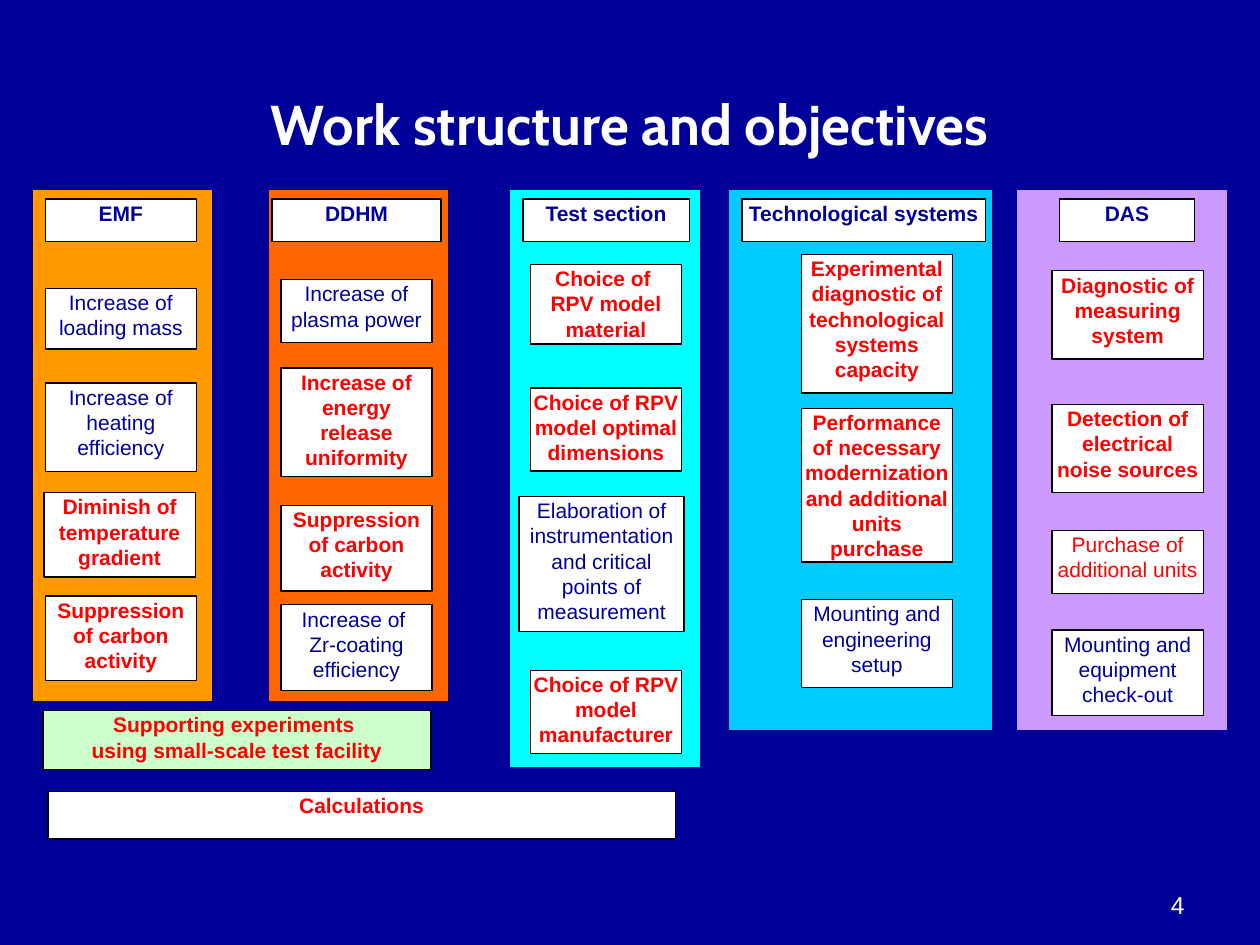
from dataclasses import dataclass

from pptx import Presentation
from pptx.dml.color import RGBColor as RGB
from pptx.enum.shapes import MSO_SHAPE as SHAPE
from pptx.enum.text import MSO_ANCHOR as ANCHOR, PP_ALIGN as ALIGN
from pptx.util import Inches, Pt


@dataclass(frozen=True)
class Theme:
    navy: str = "000099"
    white: str = "FFFFFF"
    black: str = "000000"
    red: str = "FF0000"
    green: str = "CCFFCC"
    orange: str = "FF9900"
    deep_orange: str = "FF6600"
    cyan: str = "00FFFF"
    blue: str = "00CCFF"
    lilac: str = "CC99FF"
    body_font: str = "Arial"
    title_font: str = "Cabin"
    body: int = 12
    number: int = 14
    title: int = 32


T = Theme()

prs = Presentation()
prs.slide_width, prs.slide_height = Inches(10), Inches(7.5)
s = prs.slides.add_slide(prs.slide_layouts[6])
s.background.fill.solid()
s.background.fill.fore_color.rgb = RGB.from_string(T.navy)


def write(sp, text, size=T.body, font=T.body_font, color=T.navy, bold=False,
          align=ALIGN.CENTER, anchor=ANCHOR.TOP, inset=(0.02, 0.01)):
    tf = sp.text_frame
    tf.word_wrap = True
    tf.vertical_anchor = anchor
    tf.margin_left = tf.margin_right = Inches(inset[0])
    tf.margin_top = tf.margin_bottom = Inches(inset[1])
    p = tf.paragraphs[0]
    p.text = text
    p.alignment = align
    for r in p.runs:
        r.font.size, r.font.name, r.font.bold = Pt(size), font, bold
        r.font.color.rgb = RGB.from_string(color)


def add_box(x, y, w, h, fill=T.white, line=T.black):
    sp = s.shapes.add_shape(SHAPE.RECTANGLE, Inches(x), Inches(y), Inches(w), Inches(h))
    sp.shadow.inherit = False
    sp.fill.solid()
    sp.fill.fore_color.rgb = RGB.from_string(fill)
    sp.line.color.rgb = RGB.from_string(line)
    sp.line.width = Pt(0.75)
    return sp


title = s.shapes.add_textbox(Inches(0.5), Inches(0.52), Inches(9), Inches(0.91))
write(title, "Work structure and objectives", size=T.title, font=T.title_font,
      color=T.white, bold=True, anchor=ANCHOR.MIDDLE, inset=(0.1, 0.05))

PLAN = dict(color=T.navy)
KEY = dict(color=T.red, bold=True)
BUY = dict(color=T.red)

COLUMN_TOP, HEADER_TOP, HEADER_H, TASK_W = 1.51, 1.58, 0.34, 1.2

# Column: left, width, height, fill; header: text, left, width; left of the tasks
# Task: top, height, text, style, then left and width where they differ
columns = [
    (0.27, 1.41, 4.05, T.orange, "EMF", 0.36, 1.2, 0.36, [
        (2.29, 0.48, "Increase of loading mass", PLAN),
        (3.04, 0.7, "Increase of heating efficiency", PLAN),
        (3.91, 0.67, "Diminish of temperature gradient", KEY, 0.35, TASK_W),
        (4.73, 0.67, "Suppression of carbon activity", KEY),
    ]),
    (2.14, 1.41, 4.05, T.deep_orange, "DDHM", 2.16, 1.34, 2.23, [
        (2.22, 0.5, "Increase of plasma power", PLAN),
        (2.92, 0.86, "Increase of energy release uniformity", KEY),
        (4.01, 0.68, "Suppression of carbon activity", KEY),
        (4.8, 0.68, "Increase of \nZr-coating efficiency", PLAN),
    ]),
    (4.05, 1.5, 4.57, T.cyan, "Test section", 4.15, 1.32, 4.21, [
        (2.1, 0.63, "Choice of \nRPV model material", KEY),
        (3.08, 0.66, "Choice of RPV model optimal dimensions", KEY),
        (3.94, 1.07, "Elaboration of instrumentation and critical points of measurement",
         PLAN, 4.12, 1.31),
        (5.32, 0.66, "Choice of RPV model manufacturer", KEY),
    ]),
    (5.79, 2.08, 4.28, T.blue, "Technological systems", 5.89, 1.93, 6.36, [
        (2.02, 1.1, "Experimental diagnostic of technological systems capacity", KEY),
        (3.24, 1.22, "Performance of necessary modernization and additional units purchase",
         KEY),
        (4.76, 0.7, "Mounting and engineering setup", PLAN),
    ]),
    (8.08, 1.65, 4.28, T.lilac, "DAS", 8.41, 1.07, 8.35, [
        (2.15, 0.7, "Diagnostic of measuring system", KEY),
        (3.21, 0.7, "Detection of electrical noise sources", KEY),
        (4.21, 0.5, "Purchase of additional units", BUY),
        (5, 0.68, "Mounting and equipment check-out", PLAN),
    ]),
]

for left, width, height, fill, header, header_x, header_w, task_x, tasks in columns:
    add_box(left, COLUMN_TOP, width, height, fill, line=fill)
    write(add_box(header_x, HEADER_TOP, header_w, HEADER_H), header, bold=True)
    for top, task_h, text, style, *place in tasks:
        x, w = place or (task_x, TASK_W)
        write(add_box(x, top, w, task_h), text, **style)

write(add_box(0.34, 5.64, 3.08, 0.47, T.green),
      "Supporting experiments \nusing small-scale test facility", **KEY)
write(add_box(0.38, 6.28, 4.98, 0.38), "Calculations", **KEY)

number = s.shapes.add_textbox(Inches(7.17), Inches(6.83), Inches(2.33), Inches(0.52))
write(number, "4", size=T.number, color=T.white, align=ALIGN.RIGHT,
      anchor=ANCHOR.BOTTOM, inset=(0.1, 0.05))

prs.save("out.pptx")
